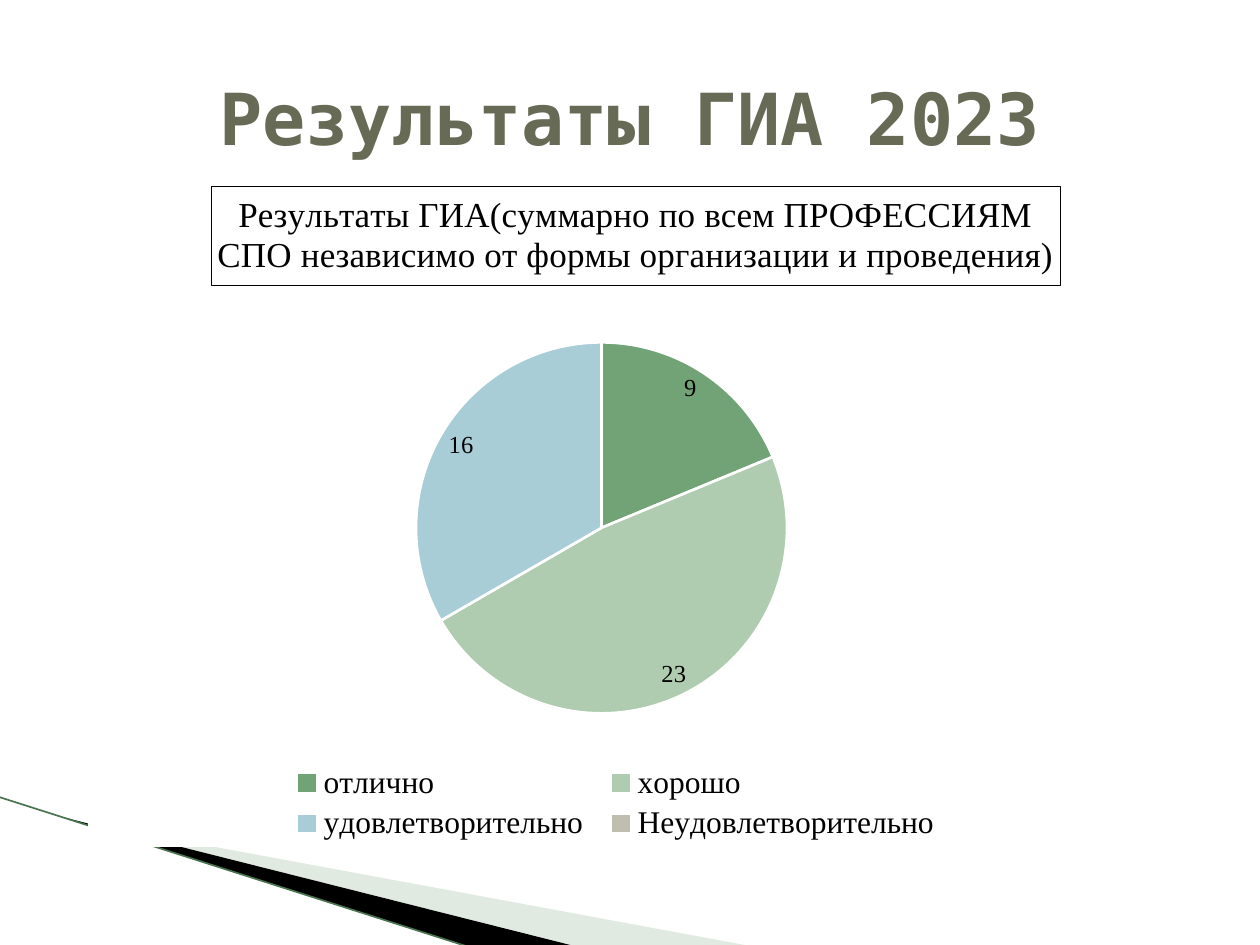
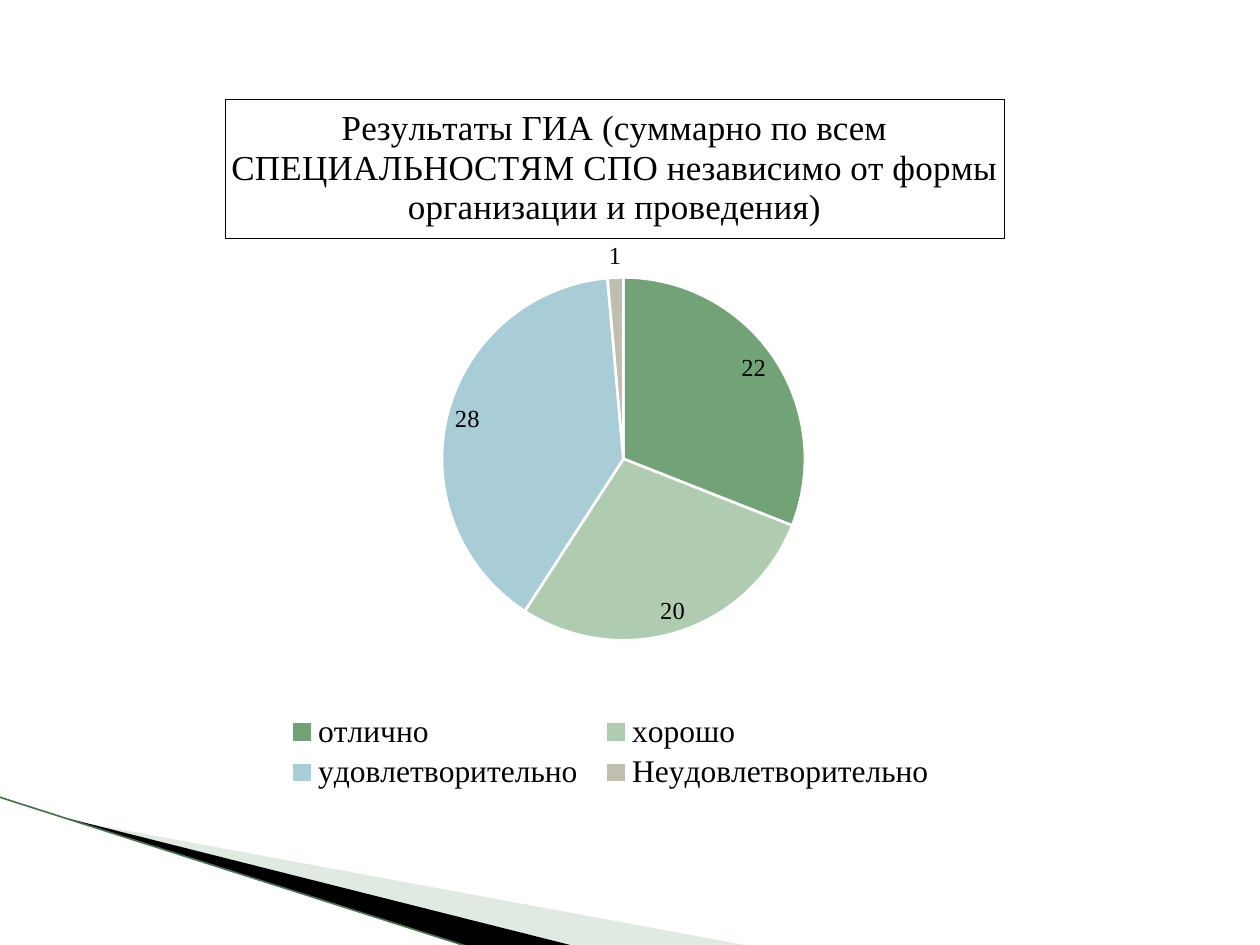
from lxml import etree
from pptx import Presentation, util as u
from pptx.chart.data import CategoryChartData
from pptx.dml.color import RGBColor
from pptx.enum import chart as ch, shapes, text
from pptx.oxml import parse_xml
from pptx.oxml.ns import nsdecls, qn

EMU_PER_PX = 914400 / 126
WHITE = RGBColor(0xFF, 0xFF, 0xFF)
BLACK = RGBColor(0, 0, 0)
OLIVE = RGBColor(0x67, 0x6A, 0x55)
PALE_GREEN = RGBColor(0xB3, 0xCB, 0xB5)
EDGE_GREEN = RGBColor(0x4A, 0x73, 0x50)
GRADE_COLORS = [RGBColor(0x72, 0xA3, 0x76), RGBColor(0xB0, 0xCC, 0xB0),
                RGBColor(0xA8, 0xCD, 0xD7), RGBColor(0xC0, 0xBE, 0xAF)]
GRADES = ["отлично", "хорошо", "удовлетворительно ", "Неудовлетворительно "]
TITLE_FONT = "DejaVu Sans Mono"
CHART_FONT = "Times New Roman"


def px(n):
    return u.Emu(round(n * EMU_PER_PX))


def place(sp, box):
    sp.left, sp.top, sp.width, sp.height = map(px, box)


def format_font(font, name=CHART_FONT, size=14, color=BLACK, bold=False):
    font.name, font.size, font.bold = name, u.Pt(size), bold
    font.color.rgb = color


def write(tf, content, align=text.PP_ALIGN.CENTER, **fmt):
    p = tf.paragraphs[0]
    p.alignment = align
    r = p.add_run()
    r.text = content
    format_font(r.font, **fmt)


def reframe(sp, box):
    """Give a freeform the frame box while its outline stays in place."""
    dx, dy = sp.left - px(box[0]), sp.top - px(box[1])
    place(sp, box)
    outline = next(sp.element.iter(qn("a:path")))
    outline.set("w", str(sp.width))
    outline.set("h", str(sp.height))
    for pt in outline.iter(qn("a:pt")):
        pt.set("x", str(int(pt.get("x")) + dx))
        pt.set("y", str(int(pt.get("y")) + dy))


def add_wedge(s, box, points, color, alpha=None):
    emu_points = [(px(x), px(y)) for x, y in points]
    builder = s.shapes.build_freeform(*emu_points[0])
    builder.add_line_segments(emu_points[1:], close=True)
    sp = builder.convert_to_shape()
    reframe(sp, box)
    sp.shadow.inherit = False
    sp.fill.solid()
    sp.fill.fore_color.rgb = color
    sp.line.fill.background()
    if alpha:
        clr = sp.element.spPr.find(qn("a:solidFill")).find(qn("a:srgbClr"))
        etree.SubElement(clr, qn("a:alpha")).set("val", str(alpha * 1000))
    return sp


def add_edge(s, x1, y1, x2, y2):
    line = s.shapes.add_connector(shapes.MSO_CONNECTOR.STRAIGHT,
                                  px(x1), px(y1), px(x2), px(y2))
    line.line.color.rgb = EDGE_GREEN
    line.line.width = u.Pt(0.95)
    etree.SubElement(line.element.spPr, qn("a:effectLst"))
    return line


def decorate_master(prs, s):
    """Draw the corner wedges on s and move them to the slide master."""
    decor = [
        add_wedge(s, (98, 689, 524, 199),
                  [(69, 820), (750, 946), (575, 946), (69, 819)], PALE_GREEN, 40),
        add_wedge(s, (-8, 798, 524, 116),
                  [(66, 818), (574, 946), (471, 948), (67, 819)], BLACK),
        add_edge(s, -1, 797, 469, 947),
    ]
    tree = prs.slide_master.shapes.element
    for i, sp in enumerate(decor, start=2):  # behind the placeholders
        tree.insert(i, sp.element)


def add_title(s, content):
    sp = s.shapes.title
    place(sp, (63, 38, 1134, 158))
    tf = sp.text_frame
    tf.vertical_anchor = text.MSO_ANCHOR.MIDDLE
    write(tf, content, name=TITLE_FONT, size=41, color=OLIVE, bold=True)


def manual_layout(frame, x, y, w=None, h=None):
    """Return a c:layout for px measured from the chart's corner."""
    width, height = frame[2:]
    inner = '<c:layoutTarget val="inner"/>' if w else ""
    size = f'<c:w val="{w / width}"/><c:h val="{h / height}"/>' if w else ""
    return parse_xml(
        f'<c:layout {nsdecls("c")}><c:manualLayout>{inner}<c:xMode val="edge"/>'
        f'<c:yMode val="edge"/><c:x val="{x / width}"/><c:y val="{y / height}"/>{size}'
        '</c:manualLayout></c:layout>')


def drop_layout(parent):
    for old in parent.findall(qn("c:layout")):
        parent.remove(old)


def place_parts(chart, frame, title_at, plot_box):
    root = chart.element.find(qn("c:chart"))
    title, plot = root.find(qn("c:title")), root.find(qn("c:plotArea"))
    drop_layout(title)
    title.find(qn("c:tx")).addnext(manual_layout(frame, *title_at))
    drop_layout(plot)
    plot.insert(0, manual_layout(frame, *plot_box))
    root.addnext(parse_xml(
        f'<c:spPr {nsdecls("c", "a")}><a:solidFill><a:srgbClr val="{WHITE}"/></a:solidFill>'
        '<a:ln><a:noFill/></a:ln></c:spPr>'))


def add_pie(s, frame, heading, values, title_at, plot_box):
    data = CategoryChartData()
    data.categories = GRADES
    data.add_series("Series 1", values)
    chart = s.shapes.add_chart(ch.XL_CHART_TYPE.PIE, *map(px, frame), data).chart
    format_font(chart.font)

    chart.has_title = True
    title = chart.chart_title
    write(title.text_frame, heading, size=20)
    title.format.fill.solid()
    title.format.fill.fore_color.rgb = WHITE
    title.format.line.color.rgb = BLACK
    title.format.line.width = u.Pt(0.5)

    chart.has_legend = True
    chart.legend.position = ch.XL_LEGEND_POSITION.BOTTOM
    chart.legend.include_in_layout = False
    format_font(chart.legend.font, size=18)

    plot = chart.plots[0]
    plot.vary_by_categories = True
    for i, color in enumerate(GRADE_COLORS):
        fmt = plot.series[0].points[i].format
        fmt.fill.solid()
        fmt.fill.fore_color.rgb = color
        fmt.line.color.rgb = WHITE
        fmt.line.width = u.Pt(1.5)

    labels = plot.series[0].data_labels
    labels.show_value = True
    labels.number_format = "0;;;"  # zero stays unlabelled
    labels.number_format_is_linked = False
    labels.position = ch.XL_LABEL_POSITION.BEST_FIT
    format_font(labels.font)
    place_parts(chart, frame, title_at, plot_box)


def main():
    prs = Presentation()
    prs.slide_width, prs.slide_height = px(1260), px(945)

    s = prs.slides.add_slide(prs.slide_layouts.get_by_name("Title Only"))
    decorate_master(prs, s)
    add_title(s, "Результаты ГИА 2023")
    add_pie(s, (88, 178, 1064, 669),
            "Результаты ГИА(суммарно по всем ПРОФЕССИЯМ СПО "
            "независимо от формы организации и проведения)",
            (9, 23, 16, 0), (123, 8), (328, 163, 371, 374))

    s = prs.slides.add_slide(prs.slide_layouts.get_by_name("Blank"))
    add_pie(s, (88, 78, 1053, 718),
            "Результаты ГИА (суммарно по всем СПЕЦИАЛЬНОСТЯМ СПО "
            "независимо от формы организации и проведения)",
            (22, 20, 28, 1), (137, 21), (354, 183, 363, 396))

    prs.save("out.pptx")


if __name__ == "__main__":
    main()
